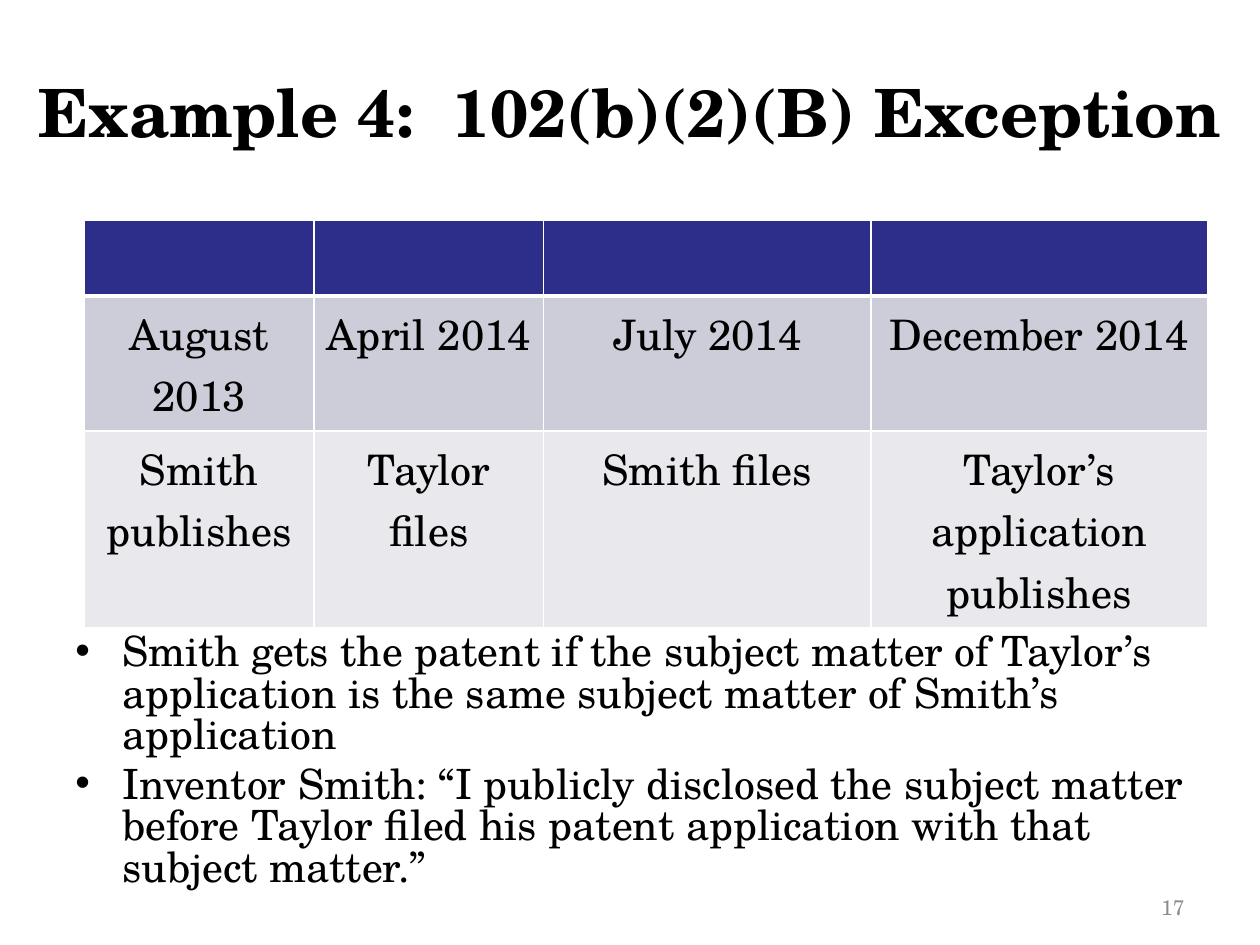
from dataclasses import dataclass

from lxml.etree import SubElement
from pptx import Presentation
from pptx.dml.color import RGBColor
from pptx.enum.text import MSO_ANCHOR as Anchor, PP_ALIGN as Align
from pptx.oxml.ns import qn
from pptx.util import Cm, Pt


@dataclass(frozen=True)
class Theme:
    """Colours, font and type sizes of the slide."""
    font: str = "TeX Gyre Schola"
    ink: str = "000000"
    muted: str = "8C8C8C"
    rule: str = "FFFFFF"
    bands: tuple = ("2D2D8A", "CDCDDA", "E8E8ED")
    title: float = 38
    cell: float = 24
    body: float = 23.8
    number: float = 12


THEME = Theme()
COLUMNS = (4.63, 4.63, 6.6, 6.78)
ROWS = (1.52, 2.72, 3.96)
EVENTS = (
    ("August 2013", "April 2014", "July 2014", "December 2014"),
    ("Smith publishes", "Taylor files", "Smith files", "Taylor’s application publishes"),
)
POINTS = (
    "Smith gets the patent if the subject matter of Taylor’s application "
    "is the same subject matter of Smith’s application",
    "Inventor Smith: “I publicly disclosed the subject matter before Taylor "
    "filed his patent application with that subject matter.”",
)


def write(p, text, size, color=THEME.ink, bold=False, align=Align.LEFT):
    """Write formatted text into a paragraph."""
    p.alignment = align
    r = p.add_run()
    r.text = text
    r.font.name = THEME.font
    r.font.size = Pt(size)
    r.font.bold = bold
    r.font.color.rgb = RGBColor.from_string(color)


def add_box(slide, box, anchor):
    """Add a wrapping text box and return its text frame."""
    tf = slide.shapes.add_textbox(*map(Cm, box)).text_frame
    tf.word_wrap = True
    tf.vertical_anchor = anchor
    return tf


def add_title(slide, box, text):
    """Place the centred slide title."""
    tf = add_box(slide, box, Anchor.MIDDLE)
    write(tf.paragraphs[0], text, THEME.title, bold=True, align=Align.CENTER)


def add_number(slide, box, text):
    """Place the slide number."""
    tf = add_box(slide, box, Anchor.BOTTOM)
    write(tf.paragraphs[0], text, THEME.number, color=THEME.muted, align=Align.RIGHT)


def style_cell(cell, fill, bottom, top):
    """Give a cell its borders, margins and fill."""
    tc_pr = cell._tc.get_or_add_tcPr()
    for side, width in (("L", 1), ("R", 1), ("T", top), ("B", bottom)):
        ln = SubElement(tc_pr, qn(f"a:ln{side}"), w=str(Pt(width)))
        SubElement(SubElement(ln, qn("a:solidFill")), qn("a:srgbClr"), val=THEME.rule)
    cell.margin_left = cell.margin_right = Cm(0.24)
    cell.fill.solid()
    cell.fill.fore_color.rgb = RGBColor.from_string(fill)


def add_timeline(slide, left, top):
    """Place the table of dates and events under an empty header row."""
    box = map(Cm, (left, top, sum(COLUMNS), sum(ROWS)))
    table = slide.shapes.add_table(len(ROWS), len(COLUMNS), *box).table
    for column, width in zip(table.columns, COLUMNS):
        column.width = Cm(width)
    for i, (row, height) in enumerate(zip(table.rows, ROWS)):
        row.height = Cm(height)
        for j, cell in enumerate(row.cells):
            style_cell(cell, THEME.bands[i], bottom=3 if i == 0 else 1, top=3 if i == 1 else 1)
            p = cell.text_frame.paragraphs[0]
            if i:
                write(p, EVENTS[i - 1][j], THEME.cell, align=Align.CENTER)
            else:
                p.font.size = Pt(THEME.cell)


def add_points(slide, box, points):
    """Place the bulleted conclusions."""
    tf = add_box(slide, box, Anchor.TOP)
    for i, text in enumerate(points):
        p = tf.add_paragraph() if i else tf.paragraphs[0]
        p.line_spacing = 0.83
        p.space_before = Pt(4.5 if i else 0)
        p_pr = p._p.get_or_add_pPr()
        p_pr.set("marL", str(Cm(0.95)))
        p_pr.set("indent", str(-Cm(0.95)))
        SubElement(p_pr, qn("a:buFont"), typeface="Arial")
        SubElement(p_pr, qn("a:buChar"), char="•")
        write(p, text, THEME.body)


def main():
    """Build and save the slide."""
    prs = Presentation()
    prs.slide_width, prs.slide_height = Cm(25.4), Cm(19.05)
    slide = prs.slides.add_slide(prs.slide_layouts[6])
    add_points(slide, (1.27, 12.65, 22.86, 6.35), POINTS)
    add_number(slide, (18.2, 17.35, 5.93, 1.32), "17")
    add_timeline(slide, 1.7, 4.45)
    add_title(slide, (0, 0.64, 25.4, 3.18), "Example 4:  102(b)(2)(B) Exception")
    prs.save("out.pptx")


if __name__ == "__main__":
    main()
